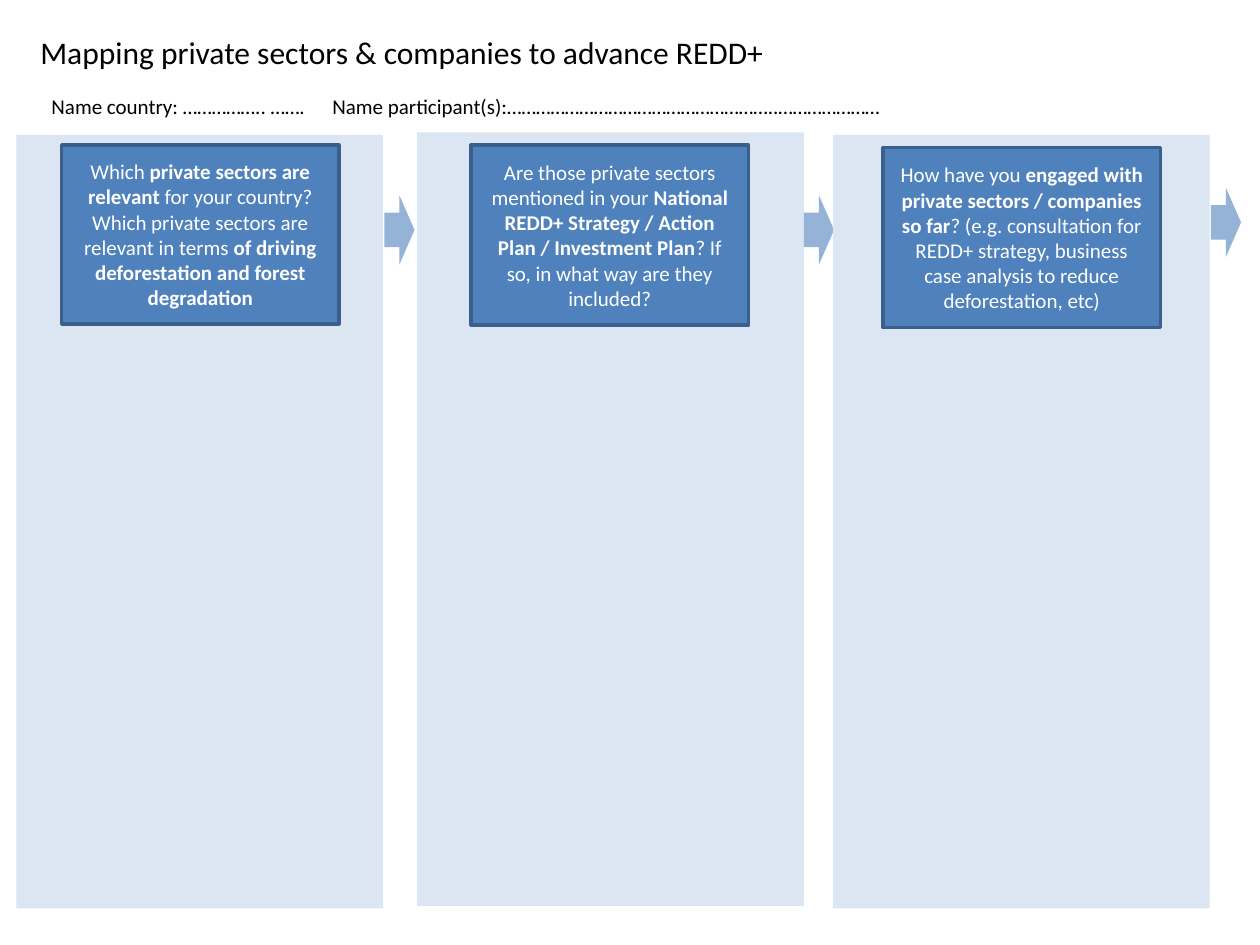
from dataclasses import dataclass

from lxml import etree
from pptx import Presentation
from pptx.dml.color import RGBColor
from pptx.enum import shapes, text
from pptx.oxml import ns
from pptx.util import Inches, Pt


@dataclass(frozen=True)
class Theme:
    """Colours, font and type sizes of the slide."""
    font: str = "Calibri"
    title_size: int = 18
    body_size: int = 12
    ink: str = "000000"
    white: str = "FFFFFF"
    panel: str = "DCE6F2"
    question: str = "4F81BD"
    border: str = "3A5F8C"
    arrow: str = "95B3D7"


THEME = Theme()

# Each column: panel box, question box, arrow box, question as (text, bold) runs
COLUMNS = [
    ((0.13, 1.07, 2.91, 6.14), (0.49, 1.15, 2.2, 1.42), (3.05, 1.55, 0.24, 0.55), [
        ("Which ", False),
        ("private sectors are relevant ", True),
        ("for your country? Which private sectors are relevant in terms ", False),
        ("of driving deforestation and forest degradation", True),
    ]),
    ((3.31, 1.05, 3.07, 6.14), (3.74, 1.15, 2.2, 1.43), (6.38, 1.55, 0.24, 0.55), [
        ("Are those private sectors mentioned in your ", False),
        ("National REDD+ Strategy / Action Plan / Investment Plan", True),
        ("? If so, in what way are they included?", False),
    ]),
    ((6.61, 1.07, 2.99, 6.14), (7.01, 1.17, 2.2, 1.43), (9.61, 1.49, 0.24, 0.55), [
        ("How have you ", False),
        ("engaged with private sectors / companies so far", True),
        ("? (e.g. consultation for REDD+ strategy, business case analysis "
         "to reduce deforestation, etc)", False),
    ]),
]


def style_font(font, size, color):
    """Apply the theme font with a size and a colour."""
    font.name = THEME.font
    font.size = Pt(size)
    font.color.rgb = RGBColor.from_string(color)


def add_block(slide, kind, box, fill):
    """Add a flat preset shape without outline."""
    shape = slide.shapes.add_shape(kind, *map(Inches, box))
    shape.shadow.inherit = False
    shape.fill.solid()
    shape.fill.fore_color.rgb = RGBColor.from_string(fill)
    shape.line.fill.background()
    return shape


def add_title(slide, box):
    """Place the title placeholder and fill it."""
    title = slide.shapes.title
    title.left, title.top, title.width, title.height = map(Inches, box)
    frame = title.text_frame
    frame.text = "Mapping private sectors & companies to advance REDD+"
    frame.word_wrap = False
    frame.auto_size = text.MSO_AUTO_SIZE.SHAPE_TO_FIT_TEXT
    frame.vertical_anchor = text.MSO_ANCHOR.TOP
    paragraph = frame.paragraphs[0]
    paragraph.alignment = text.PP_ALIGN.LEFT
    style_font(paragraph.font, THEME.title_size, THEME.ink)


def add_name_line(slide, box):
    """Add the fill-in line, its two fields parted by a tab stop."""
    frame = slide.shapes.add_textbox(*map(Inches, box)).text_frame
    frame.word_wrap = True
    frame.auto_size = text.MSO_AUTO_SIZE.SHAPE_TO_FIT_TEXT
    paragraph = frame.paragraphs[0]
    paragraph.add_run().text = (
        "Name country: …………….. …….\t"
        "Name participant(s):………………………………………………..…………………")
    tabs = etree.SubElement(paragraph._p.get_or_add_pPr(), ns.qn("a:tabLst"))
    etree.SubElement(tabs, ns.qn("a:tab"), pos=str(Inches(2.23)), algn="l")
    style_font(paragraph.font, THEME.body_size, THEME.ink)


def add_question(slide, box, runs):
    """Add an outlined question box with partly bold text."""
    shape = add_block(slide, shapes.MSO_SHAPE.RECTANGLE, box, THEME.question)
    shape.line.color.rgb = RGBColor.from_string(THEME.border)
    shape.line.width = Pt(2)
    frame = shape.text_frame
    frame.word_wrap = True
    frame.vertical_anchor = text.MSO_ANCHOR.MIDDLE
    paragraph = frame.paragraphs[0]
    paragraph.alignment = text.PP_ALIGN.CENTER
    style_font(paragraph.font, THEME.body_size, THEME.white)
    for wording, bold in runs:
        run = paragraph.add_run()
        run.text = wording
        run.font.bold = bold


def add_column(slide, panel_box, question_box, arrow_box, runs):
    """Add one answer panel with its question and onward arrow."""
    add_block(slide, shapes.MSO_SHAPE.RECTANGLE, panel_box, THEME.panel)
    add_question(slide, question_box, runs)
    add_block(slide, shapes.MSO_SHAPE.RIGHT_ARROW, arrow_box, THEME.arrow)


def main():
    """Build and save the slide."""
    presentation = Presentation()
    presentation.slide_width = Inches(10)
    presentation.slide_height = Inches(7.5)
    slide = presentation.slides.add_slide(presentation.slide_layouts.get_by_name("Title Only"))
    add_title(slide, (0.22, 0.21, 6.01, 0.4))
    add_name_line(slide, (0.31, 0.69, 9.41, 0.3))
    for column in COLUMNS:
        add_column(slide, *column)
    presentation.save("out.pptx")


if __name__ == "__main__":
    main()
